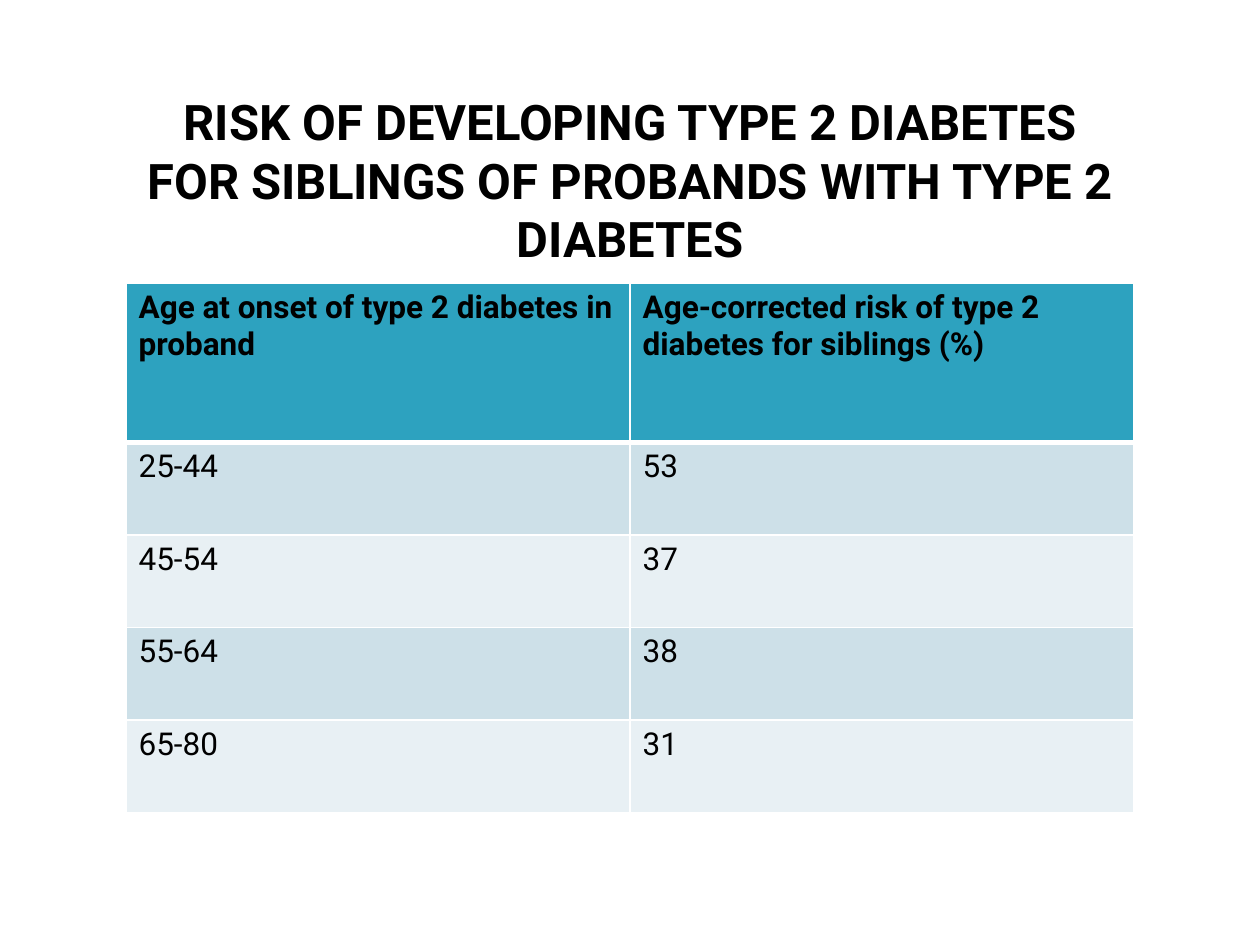
from dataclasses import dataclass

from lxml import etree
from pptx import Presentation
from pptx.dml.color import RGBColor
from pptx.enum.text import PP_ALIGN
from pptx.oxml.ns import qn
from pptx.util import Inches, Pt

CENTER = PP_ALIGN.CENTER


@dataclass(frozen=True)
class Theme:
    font: str = "Roboto"
    text: str = "000000"
    header: str = "2DA2BF"
    bands: tuple = ("CDE0E8", "E8F0F4")
    rule: str = "FFFFFF"
    title_size: int = 28
    table_size: int = 18
    thin: int = 1
    thick: int = 3


THEME = Theme()
TITLE = "RISK OF DEVELOPING TYPE 2 DIABETES FOR SIBLINGS OF PROBANDS WITH TYPE 2 DIABETES"
ROWS = [
    ("Age at onset of type 2 diabetes in proband",
     "Age-corrected risk of type 2 diabetes for siblings (%)"),
    ("25-44", "53"),
    ("45-54", "37"),
    ("55-64", "38"),
    ("65-80", "31"),
]
HEADER_SHARE = 0.3


def style_paragraph(p, size, bold):
    for r in p.runs:
        r.font.name = THEME.font
        r.font.size = Pt(size)
        r.font.bold = bold
        r.font.color.rgb = RGBColor.from_string(THEME.text)


def set_border(cell, side, width):
    ln = etree.SubElement(cell._tc.get_or_add_tcPr(), qn(f"a:ln{side}"), w=str(Pt(width)))
    fill = etree.SubElement(ln, qn("a:solidFill"))
    etree.SubElement(fill, qn("a:srgbClr"), val=THEME.rule)


def add_title(s, box):
    tf = s.shapes.add_textbox(*box).text_frame
    tf.word_wrap = True
    tf.text = TITLE
    p = tf.paragraphs[0]
    p.alignment = CENTER
    style_paragraph(p, THEME.title_size, True)


def style_cell(cell, row):
    is_header = row == 0
    widths = {side: THEME.thin for side in "LRTB"}
    if is_header:
        widths["B"] = THEME.thick
    elif row == 1:
        widths["T"] = THEME.thick
    for side, width in widths.items():
        set_border(cell, side, width)
    color = THEME.header if is_header else THEME.bands[(row - 1) % 2]
    cell.fill.solid()
    cell.fill.fore_color.rgb = RGBColor.from_string(color)
    style_paragraph(cell.text_frame.paragraphs[0], THEME.table_size, is_header)


def add_risk_table(s, box):
    table = s.shapes.add_table(len(ROWS), len(ROWS[0]), *box).table
    height = box[3]
    header_height = int(height * HEADER_SHARE)
    body_height = (height - header_height) // (len(ROWS) - 1)
    for i, values in enumerate(ROWS):
        table.rows[i].height = body_height if i else header_height
        for j, value in enumerate(values):
            cell = table.cell(i, j)
            cell.text_frame.text = value
            style_cell(cell, i)


def main():
    prs = Presentation()
    prs.slide_width, prs.slide_height = Inches(10), Inches(7.5)
    s = prs.slides.add_slide(prs.slide_layouts[6])
    w, h = prs.slide_width, prs.slide_height
    left, width = int(w * 0.1), int(w * 0.8)
    add_risk_table(s, (left, int(h * 0.3), width, int(h * 0.56)))
    add_title(s, (left, int(h * 0.09), width, int(h * 0.14)))
    prs.save("out.pptx")


if __name__ == "__main__":
    main()
